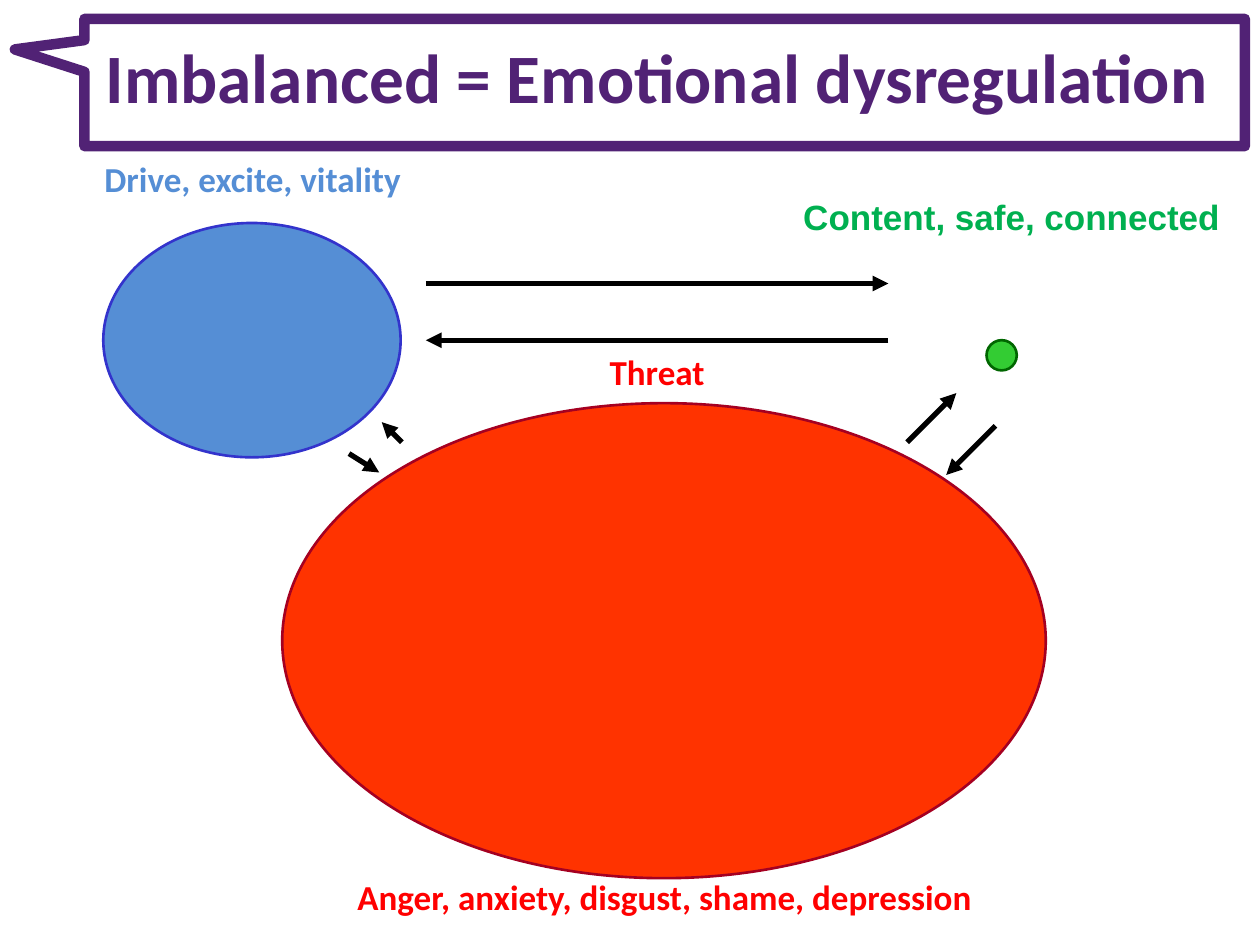
from lxml.etree import SubElement
from pptx import Presentation
from pptx.dml.color import RGBColor
from pptx.enum.shapes import MSO_CONNECTOR, MSO_SHAPE
from pptx.enum.text import MSO_ANCHOR, PP_ALIGN
from pptx.oxml.ns import qn
from pptx.util import Pt

PX = 9144

WHITE = RGBColor(0xFF, 0xFF, 0xFF)
BLACK = RGBColor(0x00, 0x00, 0x00)
PURPLE = RGBColor(0x51, 0x22, 0x75)
RED = RGBColor(0xFF, 0x00, 0x00)
BLUE = RGBColor(0x55, 0x8E, 0xD5)
GREEN = RGBColor(0x00, 0xB0, 0x50)
FLAME = RGBColor(0xFF, 0x33, 0x00)
WINE = RGBColor(0xA5, 0x00, 0x21)
LIME = RGBColor(0x33, 0xCC, 0x33)
FOREST = RGBColor(0x00, 0x66, 0x00)
INDIGO = RGBColor(0x33, 0x33, 0xCC)

CIRCLES = [
    ((783, 270, 24, 24), LIME, FOREST),
    ((224, 320, 606, 377), FLAME, WINE),
    ((82, 177, 236, 186), BLUE, INDIGO),
]
ARROWS = [
    (338, 225, 705, 225),
    (705, 270, 338, 270),
    (277, 360, 301, 375),
    (319, 351, 303, 335),
    (790, 338, 751, 377),
    (720, 351, 759, 312),
]
LABELS = [
    ("Drive, excite, vitality", (43, 120, 315, 44), BLUE, "Calibri"),
    ("Content, safe, connected", (606, 150, 394, 44), GREEN, "Arial"),
    ("Threat", (364, 273, 315, 44), RED, "Calibri"),
]
MOODS = ("Anger, anxiety, disgust, shame, depression",
         (244, 690, 567, 44), RED, "Calibri")


def scale(box):
    return [n * PX for n in box]


def write(shape, text, size, color, face):
    frame = shape.text_frame
    frame.text = text
    frame.word_wrap = True
    line = frame.paragraphs[0]
    line.alignment = PP_ALIGN.CENTER
    font = line.runs[0].font
    font.size, font.bold, font.name = Pt(size), True, face
    font.color.rgb = color


def add_title(slide, text, box):
    title = slide.shapes.title
    title.left, title.top, title.width, title.height = scale(box)
    write(title, text, 39.6, PURPLE, "Calibri")
    title.text_frame.vertical_anchor = MSO_ANCHOR.MIDDLE


def add_label(slide, text, box, color, face):
    label = slide.shapes.add_shape(MSO_SHAPE.RECTANGLE, *scale(box))
    label.shadow.inherit = False
    label.fill.solid()
    label.fill.fore_color.rgb = WHITE
    label.line.fill.background()
    write(label, text, 20, color, face)
    label.text_frame.vertical_anchor = MSO_ANCHOR.TOP


def add_circle(slide, box, fill, edge):
    circle = slide.shapes.add_shape(MSO_SHAPE.OVAL, *scale(box))
    circle.shadow.inherit = False
    circle.fill.solid()
    circle.fill.fore_color.rgb = fill
    circle.line.color.rgb = edge
    circle.line.width = Pt(1.5)


def add_arrow(slide, ends):
    arrow = slide.shapes.add_connector(MSO_CONNECTOR.STRAIGHT, *scale(ends))
    arrow.line.color.rgb = BLACK
    arrow.line.width = Pt(3)
    SubElement(arrow.line._get_or_add_ln(), qn("a:tailEnd"), type="triangle")
    SubElement(arrow._element.spPr, qn("a:effectLst"))


def add_callout(slide, box):
    frame = slide.shapes.add_shape(MSO_SHAPE.RECTANGULAR_CALLOUT, *scale(box))
    frame.shadow.inherit = False
    frame.adjustments[0] = -0.56
    frame.adjustments[1] = -0.26
    frame.fill.background()
    frame.line.color.rgb = PURPLE
    frame.line.width = Pt(6)


def main():
    deck = Presentation()
    deck.slide_width, deck.slide_height = scale((1000, 750))
    slide = deck.slides.add_slide(deck.slide_layouts[5])
    add_title(slide, "Imbalanced = Emotional dysregulation", (53, -2, 937, 125))
    add_label(slide, *MOODS)
    for circle in CIRCLES:
        add_circle(slide, *circle)
    for ends in ARROWS:
        add_arrow(slide, ends)
    for label in LABELS:
        add_label(slide, *label)
    add_callout(slide, (67, 15, 921, 101))
    deck.save("out.pptx")


if __name__ == "__main__":
    main()
